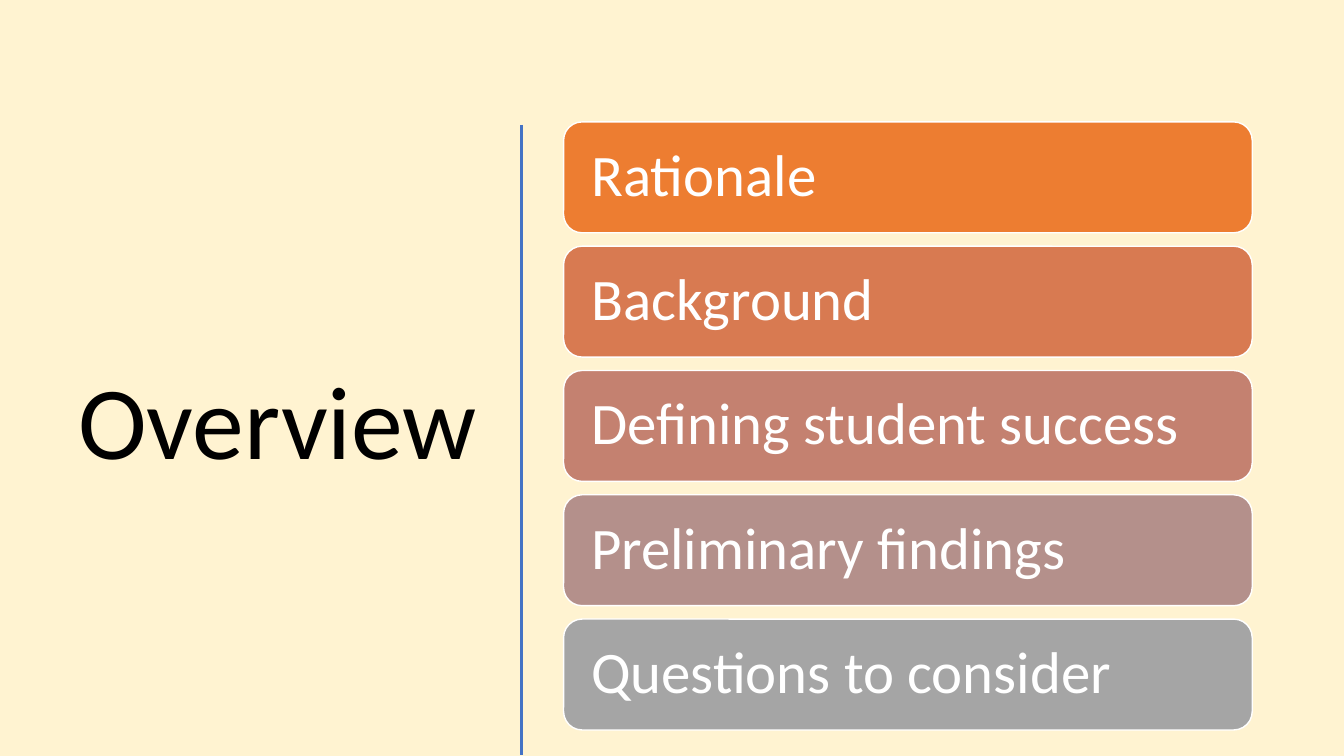
import pptx
import pptx.dml.color
import pptx.enum.shapes
import pptx.enum.text
import pptx.oxml
import pptx.util
from pptx.util import Inches

TITLE = "Overview"
TOPICS = [
    ("Rationale", "orange"),
    ("Background", "copper"),
    ("Defining student success", "clay"),
    ("Preliminary findings", "mauve"),
    ("Questions to consider", "gray"),
]
COLORS = {
    "background": "FFF3D1",
    "divider": "4472C4",
    "title": "000000",
    "white": "FFFFFF",
    "orange": "ED7D31",
    "copper": "D87A51",
    "clay": "C48170",
    "mauve": "B4908B",
    "gray": "A5A5A5",
}
FONT = "Calibri"
BAR_LEFT, BAR_TOP, BAR_WIDTH, BAR_HEIGHT = 5.59, 1.21, 6.83, 1.1
BAR_STEP = 1.233
BAR_INSET = 0.22


def rgb(name):
    return pptx.dml.color.RGBColor.from_string(COLORS[name])


def write(shape, text, size, color, align):
    tf = shape.text_frame
    tf.word_wrap = True
    tf.vertical_anchor = pptx.enum.text.MSO_ANCHOR.MIDDLE
    p = tf.paragraphs[0]
    p.text = text
    p.alignment = align
    p.line_spacing = 0.9
    p.font.name = FONT
    p.font.size = pptx.util.Pt(size)
    p.font.color.rgb = rgb(color)
    return tf


def add_divider(slide, x, top, bottom):
    line = slide.shapes.add_connector(
        pptx.enum.shapes.MSO_CONNECTOR.STRAIGHT,
        Inches(x), Inches(top), Inches(x), Inches(bottom))
    line.line.color.rgb = rgb("divider")
    line.line.width = pptx.util.Pt(2)
    sp_pr = line._element.spPr
    sp_pr.append(sp_pr.makeelement(pptx.oxml.ns.qn("a:effectLst"), {}))


def add_bar(slide, index, text, color):
    bar = slide.shapes.add_shape(
        pptx.enum.shapes.MSO_SHAPE.ROUNDED_RECTANGLE,
        Inches(BAR_LEFT), Inches(BAR_TOP + index * BAR_STEP),
        Inches(BAR_WIDTH), Inches(BAR_HEIGHT))
    bar.shadow.inherit = False
    bar.fill.solid()
    bar.fill.fore_color.rgb = rgb(color)
    bar.line.color.rgb = rgb("white")
    bar.line.width = pptx.util.Pt(1)
    tf = write(bar, text, 42, "white", pptx.enum.text.PP_ALIGN.LEFT)
    tf.margin_left = tf.margin_right = Inches(BAR_INSET)
    tf.margin_top = tf.margin_bottom = Inches(BAR_INSET)


def main():
    prs = pptx.Presentation()
    prs.slide_width, prs.slide_height = Inches(13.33), Inches(7.5)
    s = prs.slides.add_slide(prs.slide_layouts[6])
    s.background.fill.solid()
    s.background.fill.fore_color.rgb = rgb("background")
    title = s.shapes.add_textbox(
        Inches(0.52), Inches(1.17), Inches(4.31), Inches(6.11))
    write(title, TITLE, 74, "title", pptx.enum.text.PP_ALIGN.RIGHT)
    add_divider(s, 5.17, 1.24, 7.49)
    for index, (text, color) in enumerate(TOPICS):
        add_bar(s, index, text, color)
    prs.save("out.pptx")


if __name__ == "__main__":
    main()
